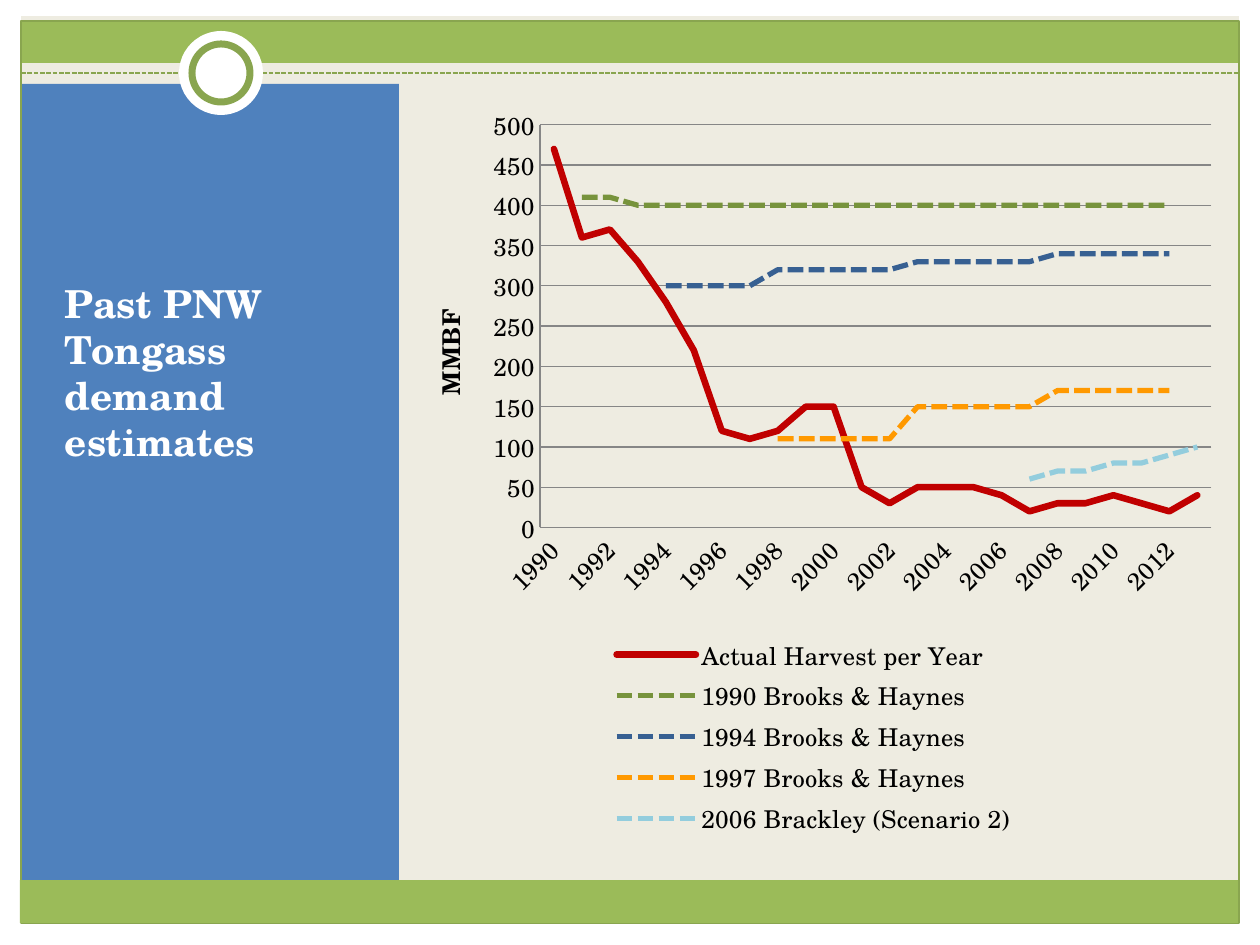
from dataclasses import dataclass

from lxml.etree import SubElement
from pptx import Presentation
from pptx.chart.data import CategoryChartData
from pptx.dml.color import RGBColor
from pptx.enum.chart import XL_CHART_TYPE, XL_LEGEND_POSITION, XL_TICK_MARK
from pptx.enum.dml import MSO_LINE
from pptx.enum.shapes import MSO_CONNECTOR, MSO_SHAPE
from pptx.enum.text import MSO_ANCHOR, MSO_AUTO_SIZE, PP_ALIGN
from pptx.oxml import parse_xml
from pptx.oxml.ns import nsdecls, qn
from pptx.util import Emu, Pt

SCALE = 914400 / 126
FONT = "TeX Gyre Schola"
HEX = {
    "paper": "EEECE1", "white": "FFFFFF", "black": "000000", "grid": "868686",
    "band": "9BBB59", "edge": "89A54F", "panel": "4F81BD",
    "red": "C00000", "green": "77933C", "navy": "376092",
    "orange": "FF9900", "sky": "93CDDD",
}
YEARS = range(1990, 2014)


@dataclass
class Part:
    box: tuple[int, int, int, int]
    fill: str | None = None
    line: str | None = None
    width: float = 0
    kind: MSO_SHAPE = MSO_SHAPE.RECTANGLE


@dataclass
class Trend:
    name: str
    start: int
    vals: list[int]
    color: str
    width: float = 3
    dashed: bool = True


FRAME = [
    Part((21, 21, 1218, 42), "band"),
    Part((0, 924, 1260, 21), "white"),
    Part((1239, 0, 21, 945), "white"),
    Part((0, 0, 1260, 16), "white"),
    Part((0, 0, 21, 945), "white"),
    Part((21, 84, 378, 809), "panel"),
    Part((21, 21, 1218, 902), None, "edge", 0.75),
]
BADGE = [
    Part((179, 31, 84, 84), "white", kind=MSO_SHAPE.OVAL),
    Part((192, 44, 58, 58), "white", "edge", 4, MSO_SHAPE.OVAL),
    Part((20, 880, 1218, 43), "band"),
]
TRENDS = [
    Trend("Actual Harvest per Year", 1990,
          [470, 360, 370, 330, 280, 220, 120, 110, 120, 150, 150, 50,
           30, 50, 50, 50, 40, 20, 30, 30, 40, 30, 20, 40],
          "red", 3.75, False),
    Trend("1990 Brooks & Haynes", 1991, [410] * 2 + [400] * 20, "green"),
    Trend("1994 Brooks & Haynes", 1994,
          [300] * 4 + [320] * 5 + [330] * 5 + [340] * 5, "navy"),
    Trend("1997 Brooks & Haynes", 1998,
          [110] * 5 + [150] * 5 + [170] * 5, "orange"),
    Trend("2006 Brackley (Scenario 2)", 2007,
          [60, 70, 70, 80, 80, 90, 100], "sky"),
]


def px(n: int) -> Emu:
    return Emu(round(n * SCALE))


def rgb(name: str) -> RGBColor:
    return RGBColor.from_string(HEX[name])


def style(font, size: int, color: str, bold: bool = False) -> None:
    font.name, font.size, font.bold = FONT, Pt(size), bold
    font.color.rgb = rgb(color)


def stroke(line, color: str, width: float, dashed: bool = False) -> None:
    line.color.rgb = rgb(color)
    line.width = Pt(width)
    if dashed:
        line.dash_style = MSO_LINE.SQUARE_DOT


def draw(slide, part: Part) -> None:
    shape = slide.shapes.add_shape(part.kind, *map(px, part.box))
    shape.shadow.inherit = False
    if part.fill:
        shape.fill.solid()
        shape.fill.fore_color.rgb = rgb(part.fill)
    else:
        shape.fill.background()
    if part.line:
        stroke(shape.line, part.line, part.width)
    else:
        shape.line.fill.background()


def rule(slide) -> None:
    """Draw the dashed line under the top band."""
    line = slide.shapes.add_connector(
        MSO_CONNECTOR.STRAIGHT, px(21), px(73), px(1239), px(73))
    stroke(line.line, "edge", 0.9, True)
    SubElement(line._element.spPr, qn("a:effectLst"))


def head(slide) -> None:
    """Fill the title placeholder and bring it above the blue panel."""
    title = slide.shapes.title
    title.left, title.top, title.width, title.height = map(
        px, (53, 261, 357, 210))
    frame = title.text_frame
    frame.text = "Past PNW Tongass demand estimates"
    frame.word_wrap = True
    frame.auto_size = MSO_AUTO_SIZE.NONE
    frame.vertical_anchor = MSO_ANCHOR.BOTTOM
    frame.margin_left, frame.margin_right = px(12), px(40)
    para = frame.paragraphs[0]
    para.alignment = PP_ALIGN.LEFT
    style(para.font, 22, "white", True)
    title.element.getparent().append(title.element)


def layout(x: float, y: float, w: float, h: float, inner: bool = False):
    """Make a manual layout in fractions of the chart."""
    target = '<c:layoutTarget val="inner"/>' if inner else ""
    sizes = "".join(f'<c:{tag} val="{val}"/>'
                    for tag, val in zip("xywh", (x, y, w, h)))
    return parse_xml(
        f'<c:layout {nsdecls("c")}><c:manualLayout>{target}'
        f'<c:xMode val="edge"/><c:yMode val="edge"/>{sizes}'
        '</c:manualLayout></c:layout>')


def place(node, item) -> None:
    """Put a layout in a plot area or legend, in place of any old one."""
    for old in node.findall(qn("c:layout")):
        node.remove(old)
    node.insert(1 if node.tag == qn("c:legend") else 0, item)


def axes(chart) -> None:
    years, mass = chart.category_axis, chart.value_axis
    for axis in (years, mass):
        axis.major_tick_mark = axis.minor_tick_mark = XL_TICK_MARK.NONE
        stroke(axis.format.line, "grid", 0.75)
        style(axis.tick_labels.font, 14, "black")
    mass.minimum_scale, mass.maximum_scale, mass.major_unit = 0, 500, 50
    stroke(mass.major_gridlines.format.line, "grid", 0.75)
    frame = mass.axis_title.text_frame
    frame.text = "MMBF"
    style(frame.paragraphs[0].font, 14, "black", True)
    frame._txBody.bodyPr.set("rot", "-5400000")
    years._element.txPr.bodyPr.set("rot", "-2700000")
    skip = parse_xml(f'<c:tickLblSkip {nsdecls("c")} val="2"/>')
    years._element.find(qn("c:noMultiLvlLbl")).addprevious(skip)


def graph(slide) -> None:
    data = CategoryChartData()
    data.categories = [str(year) for year in YEARS]
    for item in TRENDS:
        lead = [None] * (item.start - YEARS[0])
        tail = [None] * (len(YEARS) - len(lead) - len(item.vals))
        data.add_series(item.name, lead + item.vals + tail)
    chart = slide.shapes.add_chart(
        XL_CHART_TYPE.LINE, *map(px, (399, 95, 829, 746)), data).chart
    chart.has_title = False
    style(chart.font, 14, "black")
    chart.plots[0].vary_by_categories = False
    for item, line in zip(TRENDS, chart.plots[0].series):
        line.smooth = False
        stroke(line.format.line, item.color, item.width, item.dashed)
        if not item.dashed:
            line.format.line._ln.set("cap", "rnd")
    axes(chart)
    chart.has_legend = True
    legend = chart.legend
    legend.position = XL_LEGEND_POSITION.BOTTOM
    legend.include_in_layout = False
    style(legend.font, 14, "black")
    place(legend._element, layout(0.25, 0.72, 0.5, 0.28))
    area = chart._chartSpace.chart.plotArea
    place(area, layout(0.17, 0.04, 0.81, 0.54, True))


def main() -> None:
    deck = Presentation()
    deck.slide_width, deck.slide_height = px(1260), px(945)
    slide = deck.slides.add_slide(deck.slide_layouts[5])
    slide.background.fill.solid()
    slide.background.fill.fore_color.rgb = rgb("paper")
    for part in FRAME:
        draw(slide, part)
    rule(slide)
    for part in BADGE:
        draw(slide, part)
    head(slide)
    graph(slide)
    deck.save("out.pptx")


if __name__ == "__main__":
    main()
